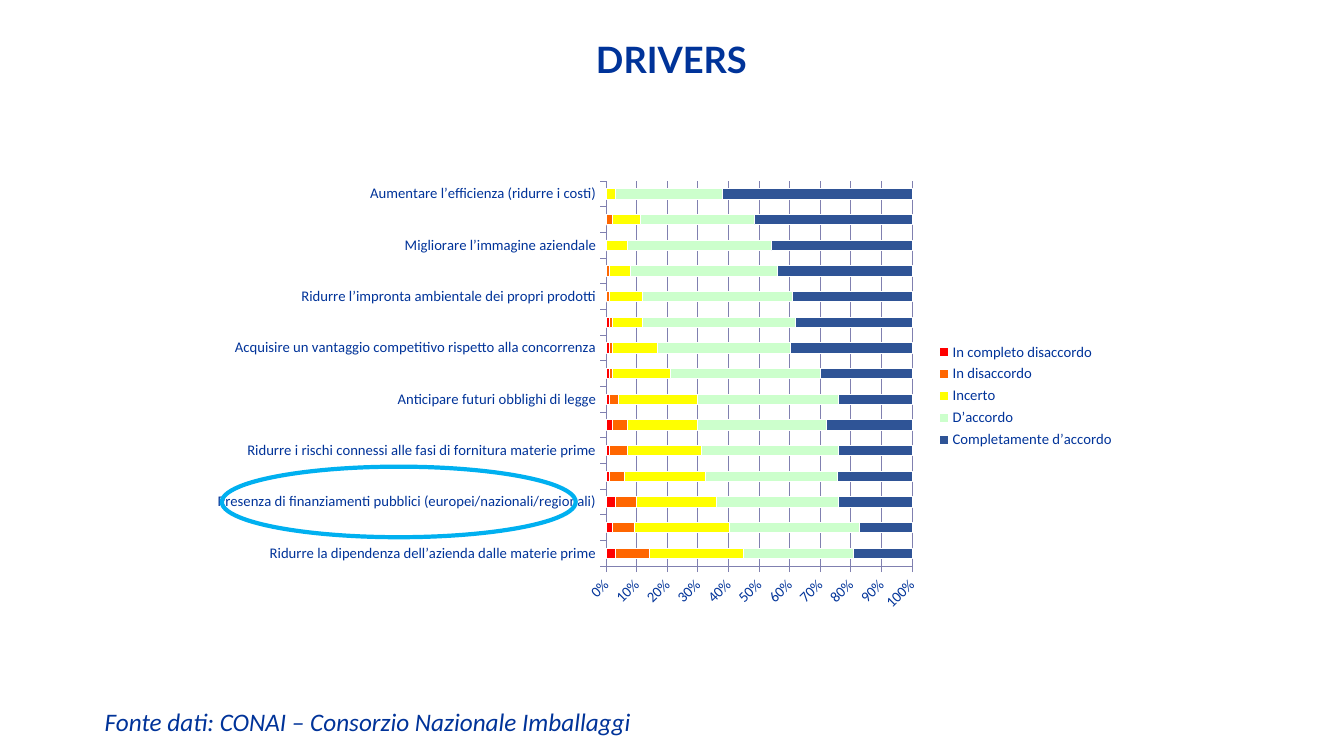
from lxml.etree import SubElement
from pptx import Presentation
from pptx.chart.data import CategoryChartData
from pptx.dml.color import RGBColor
from pptx.enum.chart import XL_CHART_TYPE, XL_LEGEND_POSITION, XL_TICK_MARK
from pptx.enum.shapes import MSO_SHAPE
from pptx.enum.text import MSO_ANCHOR, PP_ALIGN
from pptx.oxml import parse_xml
from pptx.oxml.ns import nsdecls, qn
from pptx.util import Inches, Pt

COLORS = {
    "text": "003399", "ring": "00B0F0", "grid": "8080B0", "edge": "FFFFFF",
    "red": "FF0000", "orange": "FF6600", "yellow": "FFFF00",
    "green": "CCFFCC", "blue": "2F5496",
}

CATS = [
    "Ridurre la dipendenza dell’azienda dalle materie prime",
    "Prendere esempio dai principali concorrenti",
    "Presenza di finanziamenti pubblici (europei/nazionali/regionali)",
    "Rispondere a richieste del consumatore pubblico (acquisti pubblici verdi)",
    "Ridurre i rischi connessi alle fasi di fornitura materie prime",
    "Aumentare la capacità dell’azienda di attrarre personale qualificato",
    "Anticipare futuri obblighi di legge",
    "Attuare i valori dell’azienda in tema di economia circolare",
    "Acquisire un vantaggio competitivo rispetto alla concorrenza",
    "Necessità di conformarsi a prescrizioni di legge",
    "Ridurre l’impronta ambientale dei propri prodotti",
    "Ridurre gli impatti ambientali dell’azienda",
    "Migliorare l’immagine aziendale",
    "Aumentare la soddisfazione dei clienti",
    "Aumentare l’efficienza (ridurre i costi)",
]

SERIES = [
    ("In completo disaccordo", "red",
     [3, 2, 3, 1, 1, 2, 1, 1, 1, 1, 0, 0, 0, 0, 0]),
    ("In disaccordo", "orange",
     [11, 7, 7, 5, 6, 5, 3, 1, 1, 1, 1, 1, 0, 2, 0]),
    ("Incerto", "yellow",
     [31, 31, 26, 26, 24, 23, 26, 19, 15, 10, 11, 7, 7, 9, 3]),
    ("D’accordo", "green",
     [36, 42, 40, 43, 45, 42, 46, 49, 44, 50, 49, 48, 47, 37, 35]),
    ("Completamente d’accordo", "blue",
     [19, 17, 24, 24, 24, 28, 24, 30, 40, 38, 39, 44, 46, 51, 62]),
]


def color(name):
    return RGBColor.from_string(COLORS[name])


class Page:
    def __init__(self, slide):
        self.slide = slide

    def text(self, box, words, font, size, bold=False, italic=False,
             align=PP_ALIGN.LEFT, anchor=MSO_ANCHOR.TOP):
        frame = self.slide.shapes.add_textbox(*map(Inches, box)).text_frame
        frame.word_wrap = True
        frame.vertical_anchor = anchor
        para = frame.paragraphs[0]
        para.text = words
        para.alignment = align
        style = para.font
        style.name, style.size = font, Pt(size)
        style.bold, style.italic = bold, italic
        style.color.rgb = color("text")

    def ring(self, box):
        ring = self.slide.shapes.add_shape(MSO_SHAPE.OVAL, *map(Inches, box))
        ring.shadow.inherit = False
        ring.fill.background()
        ring.line.color.rgb = color("ring")
        ring.line.width = Pt(3)

    def chart(self, box, cats, series, plot_box):
        data = CategoryChartData()
        data.categories = cats
        for name, _, vals in series:
            data.add_series(name, vals)
        chart = self.slide.shapes.add_chart(
            XL_CHART_TYPE.BAR_STACKED_100, *map(Inches, box), data).chart
        chart.has_title = False
        chart.font.name, chart.font.size = "Calibri", Pt(10.5)
        chart.font.color.rgb = color("text")

        # Bars
        plot = chart.plots[0]
        plot.gap_width, plot.overlap = 150, 100
        plot.vary_by_categories = False
        for bar, (_, tone, _) in zip(plot.series, series):
            bar.format.fill.solid()
            bar.format.fill.fore_color.rgb = color(tone)
            bar.format.line.color.rgb = color("edge")
            bar.format.line.width = Pt(0.75)

        # Axes: every second category is named, percentages are slanted
        vals, names = chart.value_axis, chart.category_axis
        vals.minimum_scale, vals.maximum_scale, vals.major_unit = 0, 1, 0.1
        vals.has_major_gridlines = True
        vals.tick_labels.number_format = "0%"
        vals.tick_labels.number_format_is_linked = False
        for axis in (vals, names):
            axis.major_tick_mark = XL_TICK_MARK.OUTSIDE
            axis.tick_labels.font.size = Pt(10.5)
        for line in (vals.format.line, names.format.line,
                     vals.major_gridlines.format.line):
            line.color.rgb = color("grid")
            line.width = Pt(0.75)
        body = vals._element.find(qn("c:txPr")).find(qn("a:bodyPr"))
        body.set("rot", "-2700000")
        body.set("vert", "horz")
        skip = parse_xml(f'<c:tickLblSkip {nsdecls("c")} val="2"/>')
        names._element.find(qn("c:noMultiLvlLbl")).addprevious(skip)

        # Legend
        chart.has_legend = True
        chart.legend.position = XL_LEGEND_POSITION.RIGHT
        chart.legend.include_in_layout = False

        # Plot area
        area = chart._chartSpace.chart.plotArea
        for old in area.findall(qn("c:layout")):
            area.remove(old)
        layout = parse_xml(f'<c:layout {nsdecls("c")}/>')
        area.insert(0, layout)
        manual = SubElement(layout, qn("c:manualLayout"))
        parts = [("layoutTarget", "inner"), ("xMode", "edge"),
                 ("yMode", "edge"), *zip("xywh", plot_box)]
        for tag, val in parts:
            SubElement(manual, qn(f"c:{tag}")).set("val", str(val))


def main():
    deck = Presentation()
    deck.slide_width, deck.slide_height = Inches(13.33), Inches(7.5)
    page = Page(deck.slides.add_slide(deck.slide_layouts[6]))

    # Title
    page.text((0.66, 0.35, 12, 0.47), "DRIVERS", "Lato", 25.9, bold=True,
              align=PP_ALIGN.CENTER, anchor=MSO_ANCHOR.MIDDLE)

    # Survey chart with one driver ringed
    page.chart((1.97, 1.71, 9.19, 4.44), CATS, SERIES,
               (0.44, 0.02, 0.33, 0.86))
    page.ring((2.2, 4.63, 3.51, 0.7))

    # Source
    page.text((0.94, 6.96, 7.89, 0.4),
              "Fonte dati: CONAI – Consorzio Nazionale Imballaggi",
              "Calibri", 18, italic=True)

    deck.save("out.pptx")


if __name__ == "__main__":
    main()
